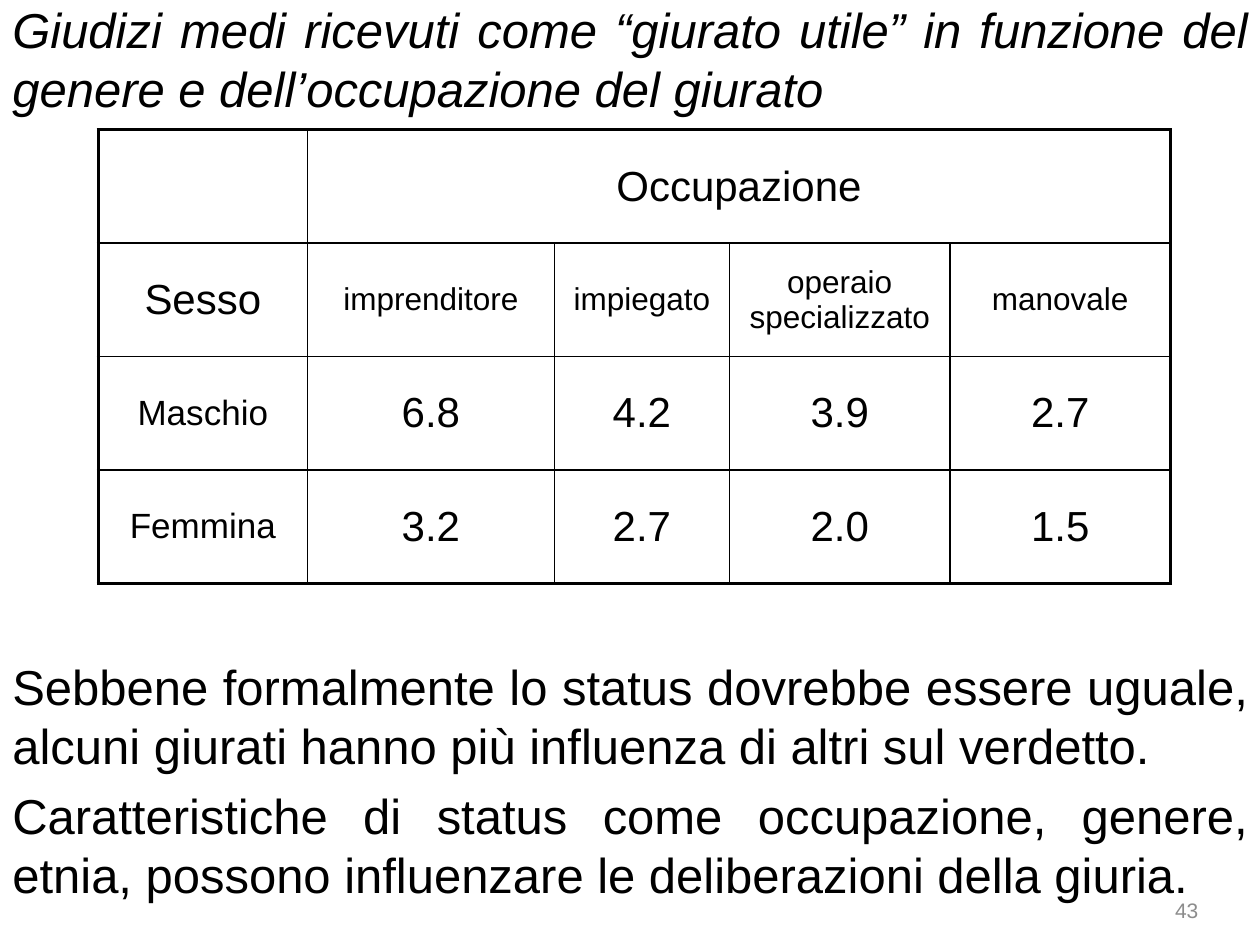
"""Build a slide with a table of mean juror ratings by sex and occupation."""
from dataclasses import dataclass

from lxml.etree import SubElement
from pptx import Presentation
from pptx.dml.color import RGBColor
from pptx.enum.text import MSO_ANCHOR, PP_ALIGN
from pptx.oxml.ns import qn
from pptx.util import Inches, Pt


@dataclass(frozen=True)
class Theme:
    font: str = "Arial"
    ink: str = "000000"
    gray: str = "8C8C8C"
    body: int = 28
    head: int = 24
    side: int = 20
    label: int = 18
    note: int = 12
    gap: float = 6.4
    thick: float = 2.25
    thin: float = 1


THEME = Theme()
TITLE = ("Giudizi medi ricevuti come “giurato utile” in funzione del "
         "genere e dell’occupazione del giurato")
BODY = [
    "Sebbene formalmente lo status dovrebbe essere uguale, alcuni giurati "
    "hanno più influenza di altri sul verdetto.",
    "Caratteristiche di status come occupazione, genere, etnia, possono "
    "influenzare le deliberazioni della giuria.",
]
COLS = [1.66, 1.96, 1.39, 1.75, 1.75]
ROW = 0.9
CELLS = [
    ["", "Occupazione", "", "", ""],
    ["Sesso", "imprenditore", "impiegato", "operaio specializzato", "manovale"],
    ["Maschio", "6.8", "4.2", "3.9", "2.7"],
    ["Femmina", "3.2", "2.7", "2.0", "1.5"],
]


def add_run(para, text, size, color=THEME.ink, italic=False):
    run = para.add_run()
    run.text = text
    font = run.font
    font.name = THEME.font
    font.size = Pt(size)
    font.italic = italic
    font.color.rgb = RGBColor.from_string(color)


def add_text(slide, box, lines, size, align=PP_ALIGN.JUSTIFY,
             anchor=MSO_ANCHOR.MIDDLE, **style):
    frame = slide.shapes.add_textbox(*map(Inches, box)).text_frame
    frame.word_wrap = True
    frame.vertical_anchor = anchor
    for i, line in enumerate(lines):
        para = frame.add_paragraph() if i else frame.paragraphs[0]
        para.alignment = align
        if i:
            para.space_before = Pt(THEME.gap)
        add_run(para, line, size, **style)


def add_edge(cell, index, side, width):
    props = cell._tc.get_or_add_tcPr()
    line = SubElement(props, qn(f"a:ln{side}"), w=str(Pt(width)))
    fill = SubElement(line, qn("a:solidFill"))
    SubElement(fill, qn("a:srgbClr"), val=THEME.ink)
    props.insert(index, line)


def frame_cell(cell, row, col):
    last = col + (cell.span_width if cell.is_merge_origin else 1)
    outer = {"L": col == 0, "R": last == len(COLS),
             "T": row == 0, "B": row == len(CELLS) - 1}
    for index, (side, rim) in enumerate(outer.items()):
        add_edge(cell, index, side, THEME.thick if rim else THEME.thin)


def cell_size(row, col):
    if row == 1 and col:
        return THEME.label
    if row > 1 and not col:
        return THEME.side
    return THEME.head


def add_grid(slide, left, top):
    shape = slide.shapes.add_table(
        len(CELLS), len(COLS), Inches(left), Inches(top),
        Inches(sum(COLS)), Inches(ROW * len(CELLS)))
    table = shape.table
    table.first_row = table.horz_banding = False
    for col, width in zip(table.columns, COLS):
        col.width = Inches(width)
    for row in table.rows:
        row.height = Inches(ROW)
    table.cell(0, 1).merge(table.cell(0, len(COLS) - 1))
    for r, texts in enumerate(CELLS):
        for c, text in enumerate(texts):
            cell = table.cell(r, c)
            cell.fill.background()
            cell.vertical_anchor = MSO_ANCHOR.MIDDLE
            frame_cell(cell, r, c)
            if text:
                para = cell.text_frame.paragraphs[0]
                para.alignment = PP_ALIGN.CENTER
                add_run(para, text, cell_size(r, c))


def main():
    deck = Presentation()
    deck.slide_width, deck.slide_height = Inches(10), Inches(7.5)
    slide = deck.slides.add_slide(deck.slide_layouts[6])
    add_text(slide, (7.21, 6.97, 2.4, 0.5), ["43"], THEME.note,
             align=PP_ALIGN.RIGHT, color=THEME.gray)
    add_text(slide, (0, -0.16, 10, 1.25), [TITLE], THEME.body, italic=True)
    add_grid(slide, 0.78, 1.03)
    add_text(slide, (0, 5.16, 10, 4.95), BODY, THEME.body,
             anchor=MSO_ANCHOR.TOP)
    deck.save("out.pptx")


if __name__ == "__main__":
    main()
